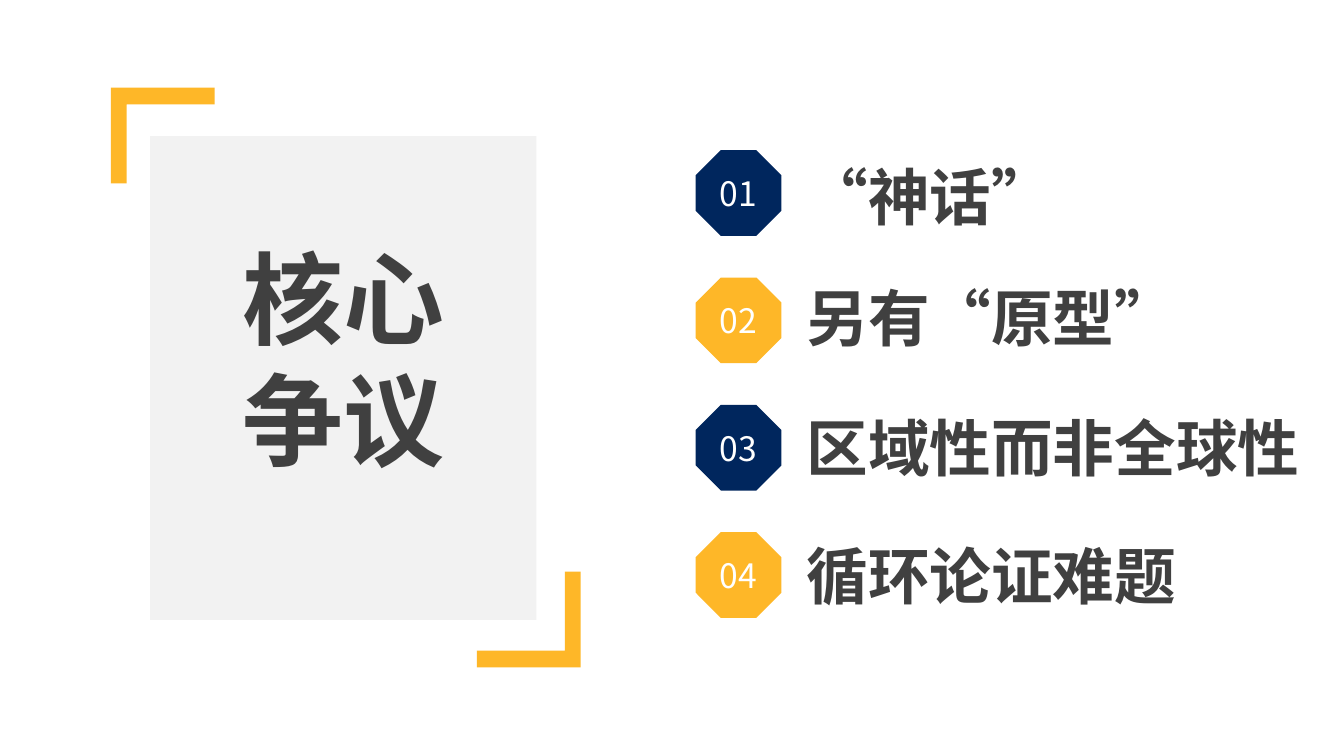
from pptx import Presentation
from pptx.dml.color import RGBColor
from pptx.enum import shapes, text
from pptx.oxml.ns import qn
from pptx.util import Inches, Pt
from lxml import etree

# Content
TITLE = "核心争议"
ITEMS = [  # label, top of its text box
    ("“神话”", 1.53),
    ("另有“原型”", 2.73),
    ("区域性而非全球性", 4.02),
    ("循环论证难题", 5.29),
]
BRACKETS = [(4.73, 5.67, 0), (1.1, 0.87, 180)]  # left, top, rotation

FONT = "Noto Sans CJK SC"
NAVY = RGBColor(0x00, 0x26, 0x5D)
AMBER = RGBColor(0xFE, 0xB7, 0x28)
PANEL = RGBColor(0xF2, 0xF2, 0xF2)
INK = RGBColor(0x40, 0x40, 0x40)
WHITE = RGBColor(0xFF, 0xFF, 0xFF)

BADGE_LEFT, BADGE_TOP, BADGE_SIZE, BADGE_STEP = 6.9, 1.49, 0.85, 1.263
LABEL_LEFT, LABEL_WIDTH, LABEL_HEIGHT = 7.9, 5.16, 0.84


def add_block(s, kind, left, top, width, height, color):
    sp = s.shapes.add_shape(kind, Inches(left), Inches(top), Inches(width), Inches(height))
    sp.shadow.inherit = False
    sp.fill.solid()
    sp.fill.fore_color.rgb = color
    sp.line.fill.background()
    return sp


def write(sp, words, size, color, bold, align, anchor):
    tf = sp.text_frame
    tf.word_wrap = True
    tf.auto_size = text.MSO_AUTO_SIZE.NONE
    tf.vertical_anchor = anchor
    p = tf.paragraphs[0]
    p.text = words
    p.alignment = align
    font = p.runs[0].font  # East Asian typeface is set beside the Latin one
    font.size, font.bold, font.name = Pt(size), bold, FONT
    font.color.rgb = color
    latin = font._element.find(qn("a:latin"))
    ea = etree.Element(qn("a:ea"), typeface=FONT)
    latin.addnext(ea)


prs = Presentation()
prs.slide_width, prs.slide_height = Inches(13.33), Inches(7.5)
s = prs.slides.add_slide(prs.slide_layouts[5])

# Corner brackets
for left, top, rotation in BRACKETS:
    sp = add_block(s, shapes.MSO_SHAPE.CORNER, left, top, 1.03, 0.95, AMBER)
    sp.adjustments[0], sp.adjustments[1] = 0.174, 0.166
    sp.rotation = rotation
    sp._element.spPr.find(qn("a:xfrm")).set("flipH", "1")

# Title on its panel
panel = add_block(s, shapes.MSO_SHAPE.RECTANGLE, 1.49, 1.35, 3.83, 4.8, PANEL)
title = s.shapes.title
panel._element.addnext(title._element)
title.left, title.top = Inches(2.03), Inches(2.3)
title.width, title.height = Inches(2.76), Inches(2.52)
write(title, TITLE, 72, INK, True, text.PP_ALIGN.CENTER, text.MSO_ANCHOR.TOP)

# Numbered list
for i, (label, label_top) in enumerate(ITEMS):
    badge = add_block(s, shapes.MSO_SHAPE.OCTAGON, BADGE_LEFT, BADGE_TOP + i * BADGE_STEP,
                      BADGE_SIZE, BADGE_SIZE, AMBER if i % 2 else NAVY)
    write(badge, f"{i + 1:02d}", 24, WHITE, False, text.PP_ALIGN.CENTER, text.MSO_ANCHOR.MIDDLE)
    box = s.shapes.add_textbox(Inches(LABEL_LEFT), Inches(label_top),
                               Inches(LABEL_WIDTH), Inches(LABEL_HEIGHT))
    write(box, label, 44, INK, True, text.PP_ALIGN.LEFT, text.MSO_ANCHOR.TOP)

prs.save("out.pptx")
